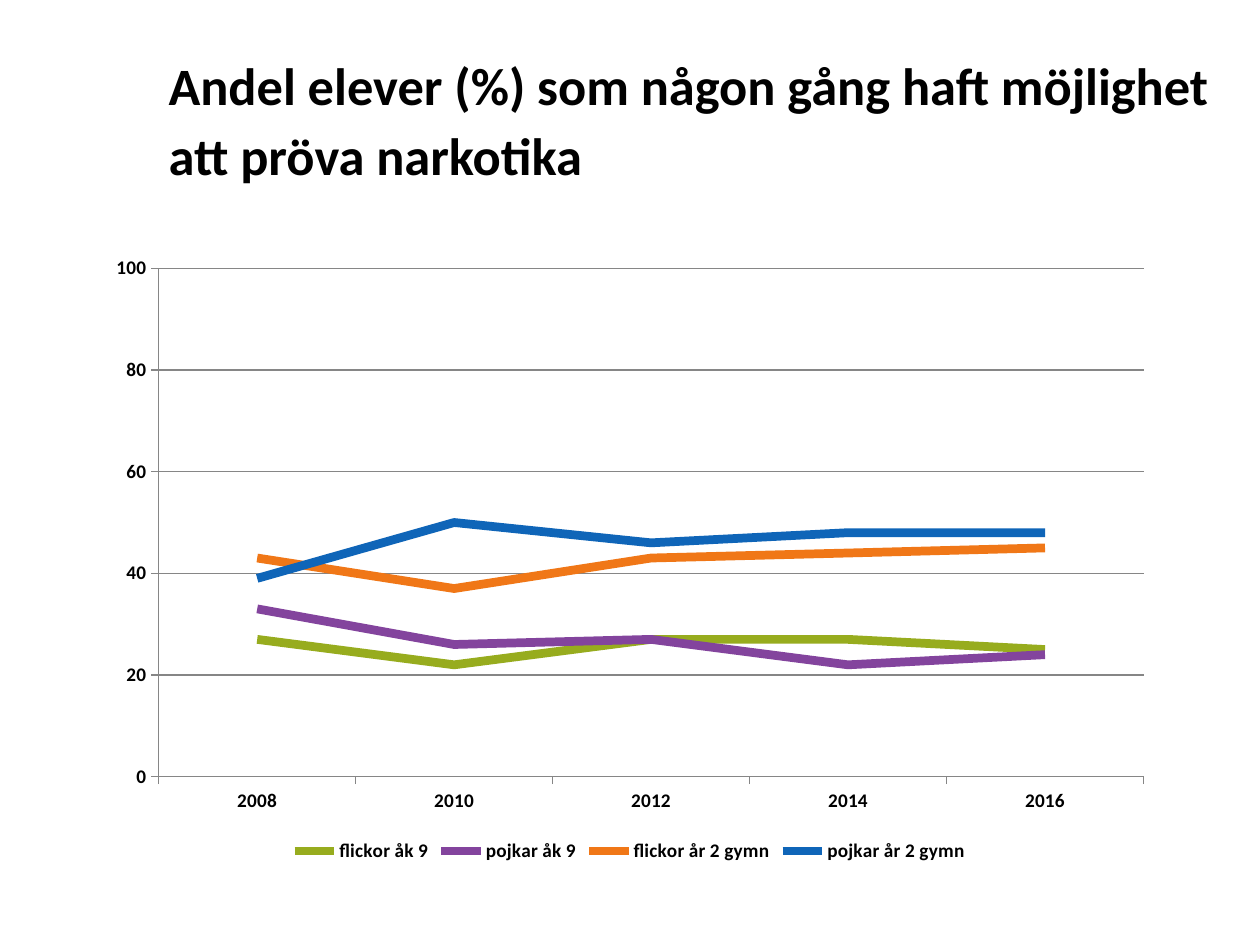
from pptx import Presentation
from pptx.chart.data import CategoryChartData
from pptx.dml.color import RGBColor
from pptx.enum.chart import XL_CHART_TYPE, XL_LEGEND_POSITION, XL_MARKER_STYLE, XL_TICK_MARK
from pptx.enum.text import MSO_ANCHOR, MSO_AUTO_SIZE, PP_ALIGN
from pptx.util import Emu, Pt

LINE = XL_CHART_TYPE.LINE
BOTTOM = XL_LEGEND_POSITION.BOTTOM
NO_MARK = XL_MARKER_STYLE.NONE
OUT, NO_TICK = XL_TICK_MARK.OUTSIDE, XL_TICK_MARK.NONE
MIDDLE, LEFT, NO_FIT = MSO_ANCHOR.MIDDLE, PP_ALIGN.LEFT, MSO_AUTO_SIZE.NONE

# Content
TITLE = "Andel elever (%) som någon gång haft möjlighet att pröva narkotika"
YEARS = ["2008", "2010", "2012", "2014", "2016"]
SERIES = [
    ("flickor åk 9", (27, 22, 27, 27, 25), "green"),
    ("pojkar åk 9", (33, 26, 27, 22, 24), "purple"),
    ("flickor år 2 gymn", (43, 37, 43, 44, 45), "orange"),
    ("pojkar år 2 gymn", (39, 50, 46, 48, 48), "blue"),
]

THEME = {
    "font": "Calibri", "title": 30, "lead": 40, "label": 11,
    "text": "000000", "grid": "868686", "green": "97AC1E",
    "purple": "83449D", "orange": "F07717", "blue": "0F65B8",
    "line": 5, "rule": 0.75,
}

# Layout in px, 126 to the inch
SCALE = 914400 // 126
SIZE = (1260, 945)
TITLE_BOX = (156, 38, 1070, 157)
CHART_BOX = (95, 244, 1070, 624)


def emu(box):
    return [Emu(n * SCALE) for n in box]


def color(name):
    return RGBColor.from_string(THEME[name])


def set_font(font, size):
    font.name = THEME["font"]
    font.size = Pt(THEME[size])
    font.bold = True
    font.color.rgb = color("text")


def set_line(line, name, width):
    line.color.rgb = color(name)
    line.width = Pt(THEME[width])


def add_title(slide):
    shape = slide.shapes.title
    shape.left, shape.top, shape.width, shape.height = emu(TITLE_BOX)
    frame = shape.text_frame
    frame.word_wrap = True
    frame.auto_size = NO_FIT
    frame.vertical_anchor = MIDDLE
    para = frame.paragraphs[0]
    para.alignment = LEFT
    para.line_spacing = Pt(THEME["lead"])
    run = para.add_run()
    run.text = TITLE
    set_font(run.font, "title")


def add_graph(slide):
    data = CategoryChartData()
    data.categories = YEARS
    for name, vals, _ in SERIES:
        data.add_series(name, vals)
    chart = slide.shapes.add_chart(LINE, *emu(CHART_BOX), data).chart
    chart.has_title = False
    set_font(chart.font, "label")

    # Lines
    plot = chart.plots[0]
    plot.vary_by_categories = False
    for line, (_, _, tint) in zip(plot.series, SERIES):
        line.smooth = False
        line.marker.style = NO_MARK
        set_line(line.format.line, tint, "line")

    # Axes
    for axis in (chart.category_axis, chart.value_axis):
        axis.major_tick_mark = OUT
        axis.minor_tick_mark = NO_TICK
        set_font(axis.tick_labels.font, "label")
        set_line(axis.format.line, "grid", "rule")
    scale = chart.value_axis
    scale.minimum_scale, scale.maximum_scale, scale.major_unit = 0, 100, 20
    scale.has_major_gridlines = True
    set_line(scale.major_gridlines.format.line, "grid", "rule")

    # Legend
    chart.has_legend = True
    chart.legend.position = BOTTOM
    chart.legend.include_in_layout = False
    set_font(chart.legend.font, "label")


def main():
    deck = Presentation()
    deck.slide_width, deck.slide_height = emu(SIZE)
    slide = deck.slides.add_slide(deck.slide_layouts[5])
    add_title(slide)
    add_graph(slide)
    deck.save("out.pptx")


if __name__ == "__main__":
    main()
